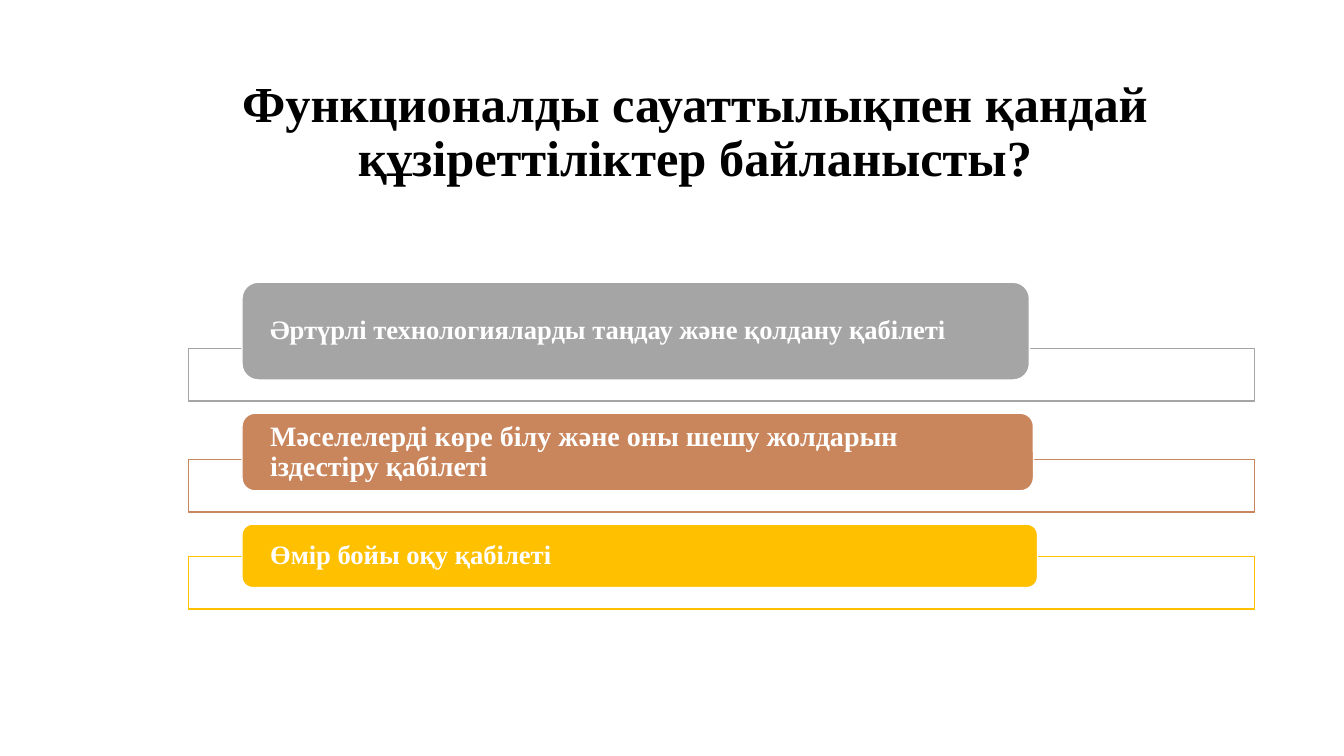
"""Build a slide listing the competences linked to functional literacy."""
import pptx
import pptx.dml.color
import pptx.enum.shapes
import pptx.enum.text
import pptx.oxml.ns
import pptx.util
from lxml import etree
from pptx.util import Inches

COLOURS = {
    "black": "000000",
    "white": "FFFFFF",
    "grey": "A5A5A5",
    "copper": "C9855C",
    "amber": "FFC000",
}
FONT = "Times New Roman"
TITLE = "Функционалды сауаттылықпен қандай құзіреттіліктер байланысты?"
COMPETENCES = [
    ("Әртүрлі технологияларды таңдау және қолдану қабілеті", "grey", 19, 2.8, 7.81, 0.97),
    ("Мәселелерді көре білу және оны шешу жолдарын іздестіру қабілеті", "copper", 20, 4.1, 7.85, 0.77),
    ("Өмір бойы оқу қабілеті", "amber", 19, 5.2, 7.89, 0.63),
]
FRAME_HEIGHT = 0.52
FRAME_DROP = 0.21
TEXT_INDENT = 0.28
CORNER_SHARE = 0.05


def colour(name):
    return pptx.dml.color.RGBColor.from_string(COLOURS[name])


def write_text(text_frame, text, size, colour_name, alignment):
    text_frame.text = text
    text_frame.word_wrap = True
    text_frame.vertical_anchor = pptx.enum.text.MSO_ANCHOR.MIDDLE
    para = text_frame.paragraphs[0]
    para.alignment = alignment
    para.line_spacing = 0.9
    font = para.runs[0].font
    font.name = FONT
    font.size = pptx.util.Pt(size)
    font.bold = True
    font.color.rgb = colour(colour_name)


def add_title(page):
    title = page.shapes.title
    title.left, title.top = Inches(1.73), Inches(0.67)
    title.width, title.height = Inches(10.33), Inches(1.3)
    write_text(title.text_frame, TITLE, 36, "black", pptx.enum.text.PP_ALIGN.CENTER)


def add_box(page, kind, left, top, width, height, fill_name, line_name):
    box = page.shapes.add_shape(kind, Inches(left), Inches(top), Inches(width), Inches(height))
    box.shadow.inherit = False
    box.fill.solid()
    box.fill.fore_color.rgb = colour(fill_name)
    box.line.color.rgb = colour(line_name)
    box.line.width = pptx.util.Pt(1)
    return box


def set_opacity(box, percent):
    qn = pptx.oxml.ns.qn
    fill_colour = box.fill._xPr.find(qn("a:solidFill")).find(qn("a:srgbClr"))
    etree.SubElement(fill_colour, qn("a:alpha")).set("val", str(percent * 1000))


def add_competence(page, text, colour_name, size, top, width, height):
    shapes = pptx.enum.shapes.MSO_SHAPE
    frame_top = top + height + FRAME_DROP - FRAME_HEIGHT
    frame = add_box(page, shapes.RECTANGLE, 1.87, frame_top, 10.57, FRAME_HEIGHT, "white", colour_name)
    set_opacity(frame, 90)
    label = add_box(page, shapes.ROUNDED_RECTANGLE, 2.4, top, width, height, colour_name, "white")
    text_frame = label.text_frame
    text_frame.margin_left = text_frame.margin_right = Inches(TEXT_INDENT - CORNER_SHARE * height)
    text_frame.margin_top = text_frame.margin_bottom = 0
    write_text(text_frame, text, size, "white", pptx.enum.text.PP_ALIGN.LEFT)


def main():
    deck = pptx.Presentation()
    deck.slide_width, deck.slide_height = Inches(13.33), Inches(7.5)
    page = deck.slides.add_slide(deck.slide_layouts[5])
    add_title(page)
    for competence in COMPETENCES:
        add_competence(page, *competence)
    deck.save("out.pptx")


if __name__ == "__main__":
    main()
